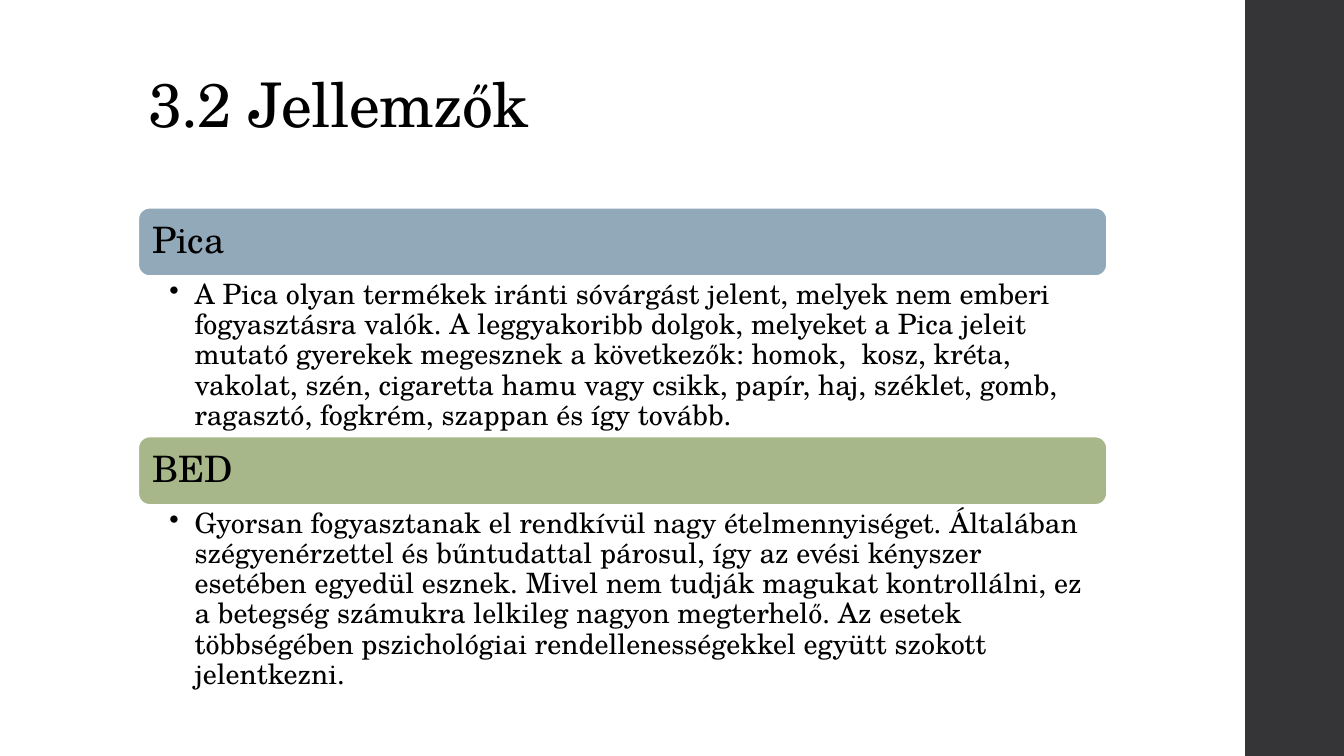
from lxml import etree
from pptx import Presentation
from pptx import util as u
from pptx.dml.color import RGBColor
from pptx.enum import shapes, text
from pptx.oxml.ns import qn

LEFT, WIDTH = 1.37, 9.61
BAR_HEIGHT = 0.68
BAR_MARGIN = 0.03
SECTIONS = [
    ("Pica", "92A9B9", 2.06, 1.59,
     "A Pica olyan termékek iránti sóvárgást jelent, melyek nem emberi "
     "fogyasztásra valók. A leggyakoribb dolgok, melyeket a Pica jeleit "
     "mutató gyerekek megesznek a következők: homok,  kosz, kréta, vakolat, "
     "szén, cigaretta hamu vagy csikk, papír, haj, széklet, gomb, ragasztó, "
     "fogkrém, szappan és így tovább."),
    ("BED", "A7B789", 4.33, 1.88,
     "Gyorsan fogyasztanak el rendkívül nagy ételmennyiséget. Általában "
     "szégyenérzettel és bűntudattal párosul, így az evési kényszer esetében "
     "egyedül esznek. Mivel nem tudják magukat kontrollálni, ez a betegség "
     "számukra lelkileg nagyon megterhelő. Az esetek többségében "
     "pszichológiai rendellenességekkel együtt szokott jelentkezni."),
]


def color(value):
    return RGBColor.from_string(value)


class SlideBuilder:
    font = "TeX Gyre Schola"
    text_color = "000000"

    def __init__(self, slide):
        self.slide = slide

    def block(self, kind, box, fill, line=None):
        """Add a filled preset shape, outlined only when line is given."""
        shape = self.slide.shapes.add_shape(kind, *map(u.Inches, box))
        shape.shadow.inherit = False
        shape.fill.solid()
        shape.fill.fore_color.rgb = color(fill)
        if line:
            shape.line.color.rgb = color(line)
            shape.line.width = u.Pt(1.35)
        else:
            shape.line.fill.background()

    def text(self, content, box, size, insets, anchor, spacing=0):
        """Add a wrapped text box; insets run left, top, right, bottom."""
        frame = self.slide.shapes.add_textbox(*map(u.Inches, box)).text_frame
        left, top, right, bottom = map(u.Inches, insets)
        frame_format = {
            "word_wrap": True, "vertical_anchor": anchor,
            "margin_left": left, "margin_top": top,
            "margin_right": right, "margin_bottom": bottom,
        }
        for name, value in frame_format.items():
            setattr(frame, name, value)
        paragraph = frame.paragraphs[0]
        paragraph.line_spacing = 0.9
        run = paragraph.add_run()
        run.text = content
        for name, value in {"name": self.font, "size": u.Pt(size)}.items():
            setattr(run.font, name, value)
        run.font.color.rgb = color(self.text_color)
        if spacing:
            run._r.get_or_add_rPr().set("spc", str(round(spacing * 100)))
        return paragraph

    def bullet(self, content, box):
        paragraph = self.text(content, box, 20, (0.31, 0.04, 0.2, 0.04),
                              text.MSO_ANCHOR.TOP)
        paragraph.level = 1
        properties = paragraph._p.get_or_add_pPr()
        properties.set("marL", str(u.Inches(0.25)))
        properties.set("indent", str(u.Inches(-0.25)))
        etree.SubElement(properties, qn("a:buChar")).set("char", "•")

    def section(self, heading, fill, top, body_height, body):
        """Add a heading bar with its bulleted text below."""
        self.block(shapes.MSO_SHAPE.ROUNDED_RECTANGLE,
                   (LEFT, top, WIDTH, BAR_HEIGHT), fill, "FFFFFF")
        heading_box = (LEFT + BAR_MARGIN, top + BAR_MARGIN,
                       WIDTH - 2 * BAR_MARGIN, BAR_HEIGHT - 2 * BAR_MARGIN)
        self.text(heading, heading_box, 26, [0.11] * 4, text.MSO_ANCHOR.MIDDLE)
        self.bullet(body, (LEFT, top + BAR_HEIGHT, WIDTH, body_height))


def main():
    presentation = Presentation()
    presentation.slide_width = u.Inches(13.33)
    presentation.slide_height = u.Inches(7.5)
    slide = presentation.slides.add_slide(presentation.slide_layouts[6])
    builder = SlideBuilder(slide)
    builder.block(shapes.MSO_SHAPE.RECTANGLE, (12.35, 0, 0.98, 7.5), "353537")
    builder.text("3.2 Jellemzők", (LEFT, 0, 10.6, 1.45), 44,
                 (0.1, 0.05, 0.1, 0.05), text.MSO_ANCHOR.BOTTOM, spacing=-0.5)
    for section in SECTIONS:
        builder.section(*section)
    presentation.save("out.pptx")


if __name__ == "__main__":
    main()
